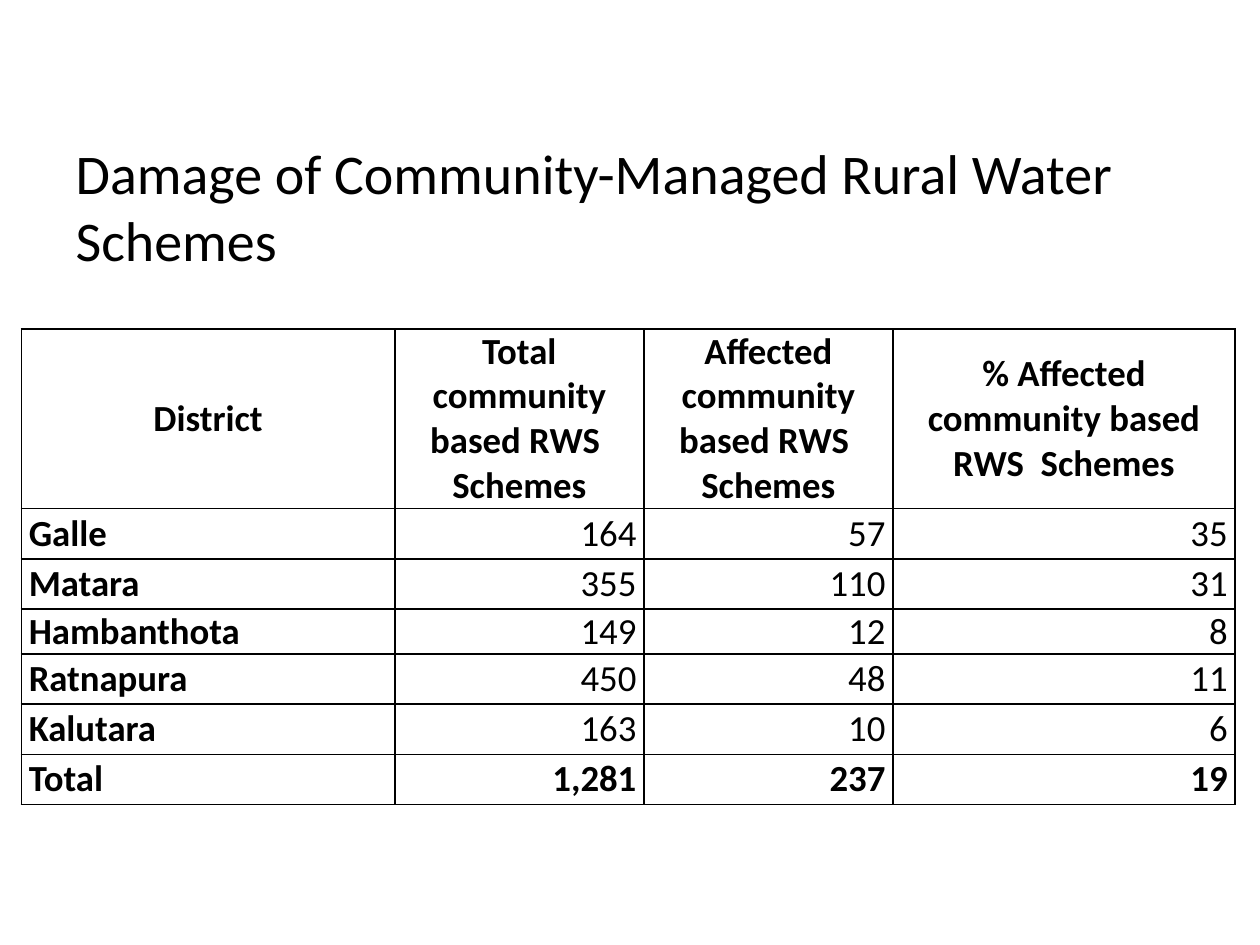
from lxml import etree
from pptx import Presentation
from pptx.dml.color import RGBColor
from pptx.enum import text
from pptx.oxml import ns
from pptx.util import Cm, Pt

BLACK = RGBColor(0x00, 0x00, 0x00)
WHITE = RGBColor(0xFF, 0xFF, 0xFF)
FONT = "Calibri"
LEFT, CENTER, RIGHT = text.PP_ALIGN.LEFT, text.PP_ALIGN.CENTER, text.PP_ALIGN.RIGHT

# Content
TITLE = "Damage of Community-Managed Rural Water Schemes"
HEADER = ("District", "Total community based RWS  Schemes",
          "Affected community based RWS  Schemes",
          "% Affected community based RWS  Schemes")
DISTRICTS = [
    ("Galle", "164", "57", "35"),
    ("Matara", "355", "110", "31"),
    ("Hambanthota", "149", "12", "8"),
    ("Ratnapura", "450", "48", "11"),
    ("Kalutara", "163", "10", "6"),
]
TOTAL = ("Total", "1,281", "237", "19")
ROWS = [HEADER, *DISTRICTS, TOTAL]

# Table measures in cm
COL_WIDTHS = (7.53, 5.02, 5.02, 6.9)
ROW_HEIGHTS = (3.56, 1.01, 1.01, 0.91, 1.01, 1.01, 1.01)


def write(tf, content, size=21, bold=False, align=LEFT):
    tf.word_wrap = True
    p = tf.paragraphs[0]
    p.alignment = align
    p.space_before = Pt(0)
    r = p.add_run()
    r.text = content
    r.font.name = FONT
    r.font.size = Pt(size)
    r.font.bold = bold
    r.font.color.rgb = BLACK


def add_borders(cell, width=Pt(1)):
    tc_pr = cell._tc.get_or_add_tcPr()
    for i, side in enumerate(("lnL", "lnR", "lnT", "lnB")):
        ln = etree.Element(ns.qn(f"a:{side}"), w=str(width))
        fill = etree.SubElement(ln, ns.qn("a:solidFill"))
        etree.SubElement(fill, ns.qn("a:srgbClr"), val=str(BLACK))
        tc_pr.insert(i, ln)


prs = Presentation()
prs.slide_width, prs.slide_height = Cm(25.4), Cm(19.05)
s = prs.slides.add_slide(prs.slide_layouts[5])

# Title
title = s.shapes.title
title.left, title.top, title.width, title.height = Cm(1.27), Cm(2.67), Cm(22.86), Cm(15.65)
title.text_frame.vertical_anchor = text.MSO_ANCHOR.TOP
title.text_frame.auto_size = text.MSO_AUTO_SIZE.NONE
write(title.text_frame, TITLE, size=32)

# Table
table = s.shapes.add_table(len(ROWS), len(HEADER), Cm(0.43), Cm(6.63),
                           Cm(sum(COL_WIDTHS)), Cm(sum(ROW_HEIGHTS))).table
table.horz_banding = False
for col, width in zip(table.columns, COL_WIDTHS):
    col.width = Cm(width)
for row, height in zip(table.rows, ROW_HEIGHTS):
    row.height = Cm(height)

for i, values in enumerate(ROWS):
    for j, value in enumerate(values):
        cell = table.cell(i, j)
        cell.margin_left = cell.margin_right = Cm(0.15)
        cell.margin_top = cell.margin_bottom = 0
        cell.vertical_anchor = text.MSO_ANCHOR.MIDDLE
        cell.fill.solid()
        cell.fill.fore_color.rgb = WHITE
        add_borders(cell)
        align = CENTER if values is HEADER else RIGHT if j else LEFT
        bold = j == 0 or values in (HEADER, TOTAL)
        write(cell.text_frame, value, bold=bold, align=align)

prs.save("out.pptx")
